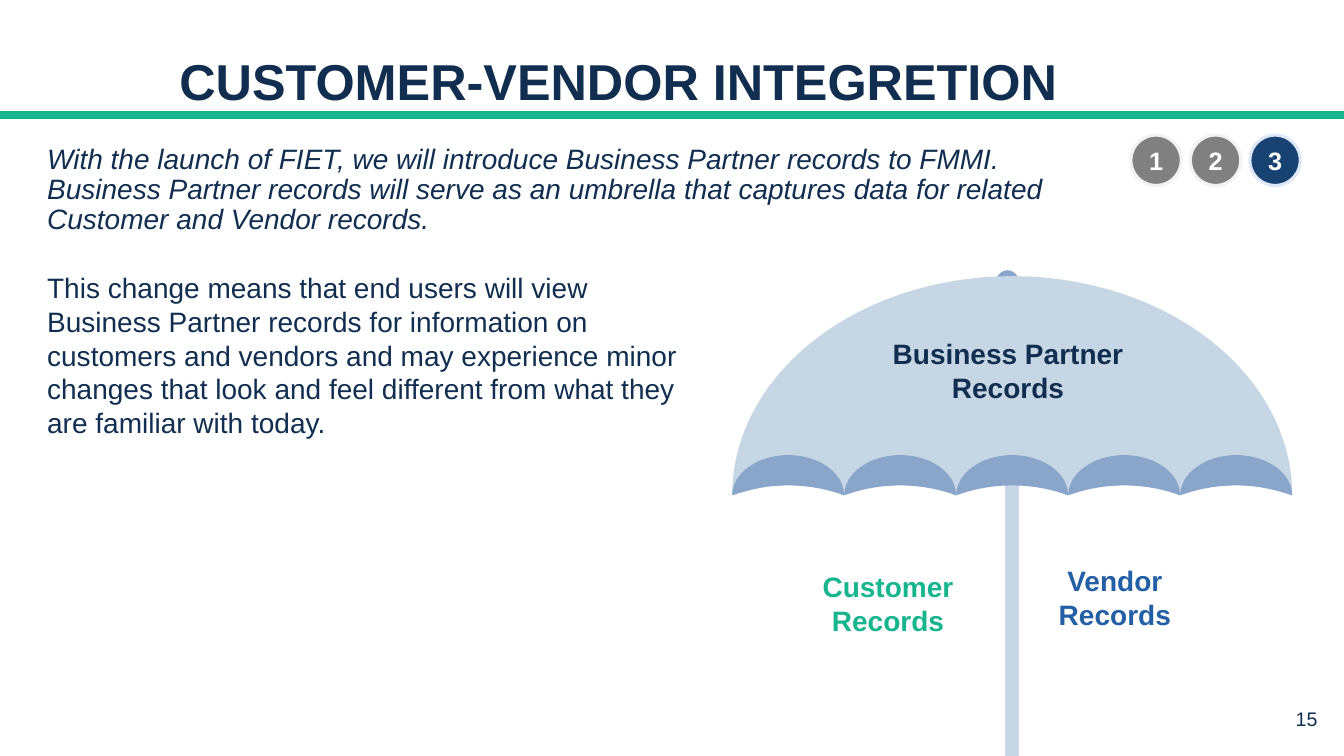
from dataclasses import dataclass
from lxml.etree import SubElement
from pptx import Presentation
from pptx.dml.color import RGBColor
from pptx.enum.shapes import MSO_CONNECTOR, MSO_SHAPE
from pptx.enum.text import MSO_ANCHOR, PP_ALIGN
from pptx.oxml.ns import qn
from pptx.util import Pt


@dataclass(frozen=True)
class Theme:
    """Colours, font and type sizes of the slide."""
    face: str = "Arial"
    navy: str = "112E50"
    green: str = "16B58E"
    blue: str = "235FA5"
    pale: str = "C6D6E5"
    mid: str = "89A5C9"
    gray: str = "808080"
    ring: str = "F2F2F2"
    deep: str = "184272"
    glow: str = "DDE9F8"
    white: str = "FFFFFF"
    head: int = 36
    main: int = 20
    step: int = 18
    foot: int = 14


LOOK = Theme()


def apply(item, form):
    """Set each attribute named in form on item."""
    for name, value in form.items():
        setattr(item, name, value)


def write(shape, text, size, tint, frame=None, para=None, font=None):
    """Put one styled paragraph in a shape."""
    body = shape.text_frame
    apply(body, {"word_wrap": True, **(frame or {})})
    line = body.paragraphs[0]
    apply(line, para or {})
    run = line.add_run()
    run.text = text
    apply(run.font, {"name": LOOK.face, "size": Pt(size), **(font or {})})
    run.font.color.rgb = RGBColor.from_string(tint)


def label(slide, box, text, size=LOOK.main, tint=LOOK.navy, **form):
    """Add a text box filling box."""
    write(slide.shapes.add_textbox(*map(Pt, box)), text, size, tint, **form)


def solid(slide, kind, box, fill, turn=0, bend=None):
    """Add a plain shape that fills box once it is turned."""
    left, top, wide, high = box
    if turn == 90:
        left, top = left + (wide - high) / 2, top + (high - wide) / 2
        wide, high = high, wide
    shape = slide.shapes.add_shape(kind, *map(Pt, (left, top, wide, high)))
    shape.shadow.inherit = False
    shape.rotation = turn
    if bend is not None:
        shape.adjustments[0] = bend
    shape.fill.solid()
    shape.fill.fore_color.rgb = RGBColor.from_string(fill)
    shape.line.fill.background()
    return shape


def rule(slide, start, end, tint, width):
    """Draw a straight line between two points."""
    line = slide.shapes.add_connector(
        MSO_CONNECTOR.STRAIGHT, *map(Pt, (*start, *end)))
    line.line.color.rgb = RGBColor.from_string(tint)
    line.line.width = Pt(width)
    SubElement(line._element.spPr, qn("a:effectLst"))


def header(slide, box):
    """Place the title above the green rule at the foot of box."""
    left, top, wide, high = box
    rule(slide, (left, top + high), (left + wide, top + high), LOOK.green, 6)
    label(slide, (left + 121, top + 28, 716.4, high - 27.2),
          "CUSTOMER-VENDOR INTEGRETION", LOOK.head,
          frame={"vertical_anchor": MSO_ANCHOR.BOTTOM},
          para={"line_spacing": 0.9}, font={"bold": True})


def prose(slide, box):
    """Place the lead in italics and the body text below it."""
    left, top, wide, high = box
    label(slide, (left, top, wide, 83.5),
          "With the launch of FIET, we will introduce Business Partner "
          "records to FMMI. Business Partner records will serve as an "
          "umbrella that captures data for related Customer and Vendor "
          "records.", para={"line_spacing": 0.9}, font={"italic": True})
    label(slide, (left, top + 90, 478.8, high - 90),
          "This change means that end users will view Business Partner "
          "records for information on customers and vendors and may "
          "experience minor changes that look and feel different from what "
          "they are familiar with today.")


def steps(slide, box, count=3, now=3):
    """Place numbered discs across box, with the current one lit."""
    left, top, wide, high = box
    pitch = (wide - high) / (count - 1)
    for num in range(1, count + 1):
        fill, edge = ((LOOK.deep, LOOK.glow) if num == now
                      else (LOOK.gray, LOOK.ring))
        disc = solid(slide, MSO_SHAPE.OVAL,
                     (left + (num - 1) * pitch, top, high, high), fill)
        disc.line.color.rgb = RGBColor.from_string(edge)
        disc.line.width = Pt(2.25)
        sides = ("left", "top", "right", "bottom")
        write(disc, str(num), LOOK.step, LOOK.white,
              frame={"vertical_anchor": MSO_ANCHOR.MIDDLE,
                     **{f"margin_{side}": 0 for side in sides}},
              para={"alignment": PP_ALIGN.CENTER}, font={"bold": True})


def brolly(slide, box, ribs=5):
    """Draw the umbrella with its labels inside box."""
    left, top, wide, high = box
    pitch = wide / ribs
    solid(slide, MSO_SHAPE.OVAL, (left + 187, top, 19.4, 26), LOOK.mid)
    for gap in range(1, ribs):
        solid(slide, MSO_SHAPE.ISOSCELES_TRIANGLE,
              (left + gap * pitch - 31, top + 123.5, 62.6, 36.7),
              LOOK.pale, 180)
    pole = left + wide / 2
    rule(slide, (pole, top + 120), (pole, top + high), LOOK.pale, 10)
    solid(slide, MSO_SHAPE.MOON, (left, top + 4.3, wide, 156.2),
          LOOK.pale, 90, 0.837)
    for rib in range(ribs):
        solid(slide, MSO_SHAPE.MOON,
              (left + rib * pitch, top + 132.1, pitch, 28.8),
              LOOK.mid, 90, 0.752)
    for text, dx, dy, span, tint in (
            ("Business Partner Records", 98.4, 44, 197.3, LOOK.navy),
            ("Customer Records", 22.8, 210.2, 177, LOOK.green),
            ("Vendor Records", 199.2, 206, 148.3, LOOK.blue)):
        label(slide, (left + dx, top + dy, span, 55.4), text, tint=tint,
              para={"alignment": PP_ALIGN.CENTER}, font={"bold": True})


def footer(slide, box):
    """Place the page number at the right of box."""
    label(slide, box, "15", LOOK.foot, para={"alignment": PP_ALIGN.RIGHT})


def main():
    """Build and save the slide."""
    deck = Presentation()
    apply(deck, {"slide_width": Pt(960), "slide_height": Pt(540)})
    slide = deck.slides.add_slide(deck.slide_layouts[6])
    footer(slide, (902.2, 501.1, 46, 28))
    header(slide, (0, 0, 960, 82))
    prose(slide, (26.6, 100, 775, 403))
    steps(slide, (807.8, 96.5, 121, 36))
    brolly(slide, (523, 193, 400, 347))
    deck.save("out.pptx")


if __name__ == "__main__":
    main()
